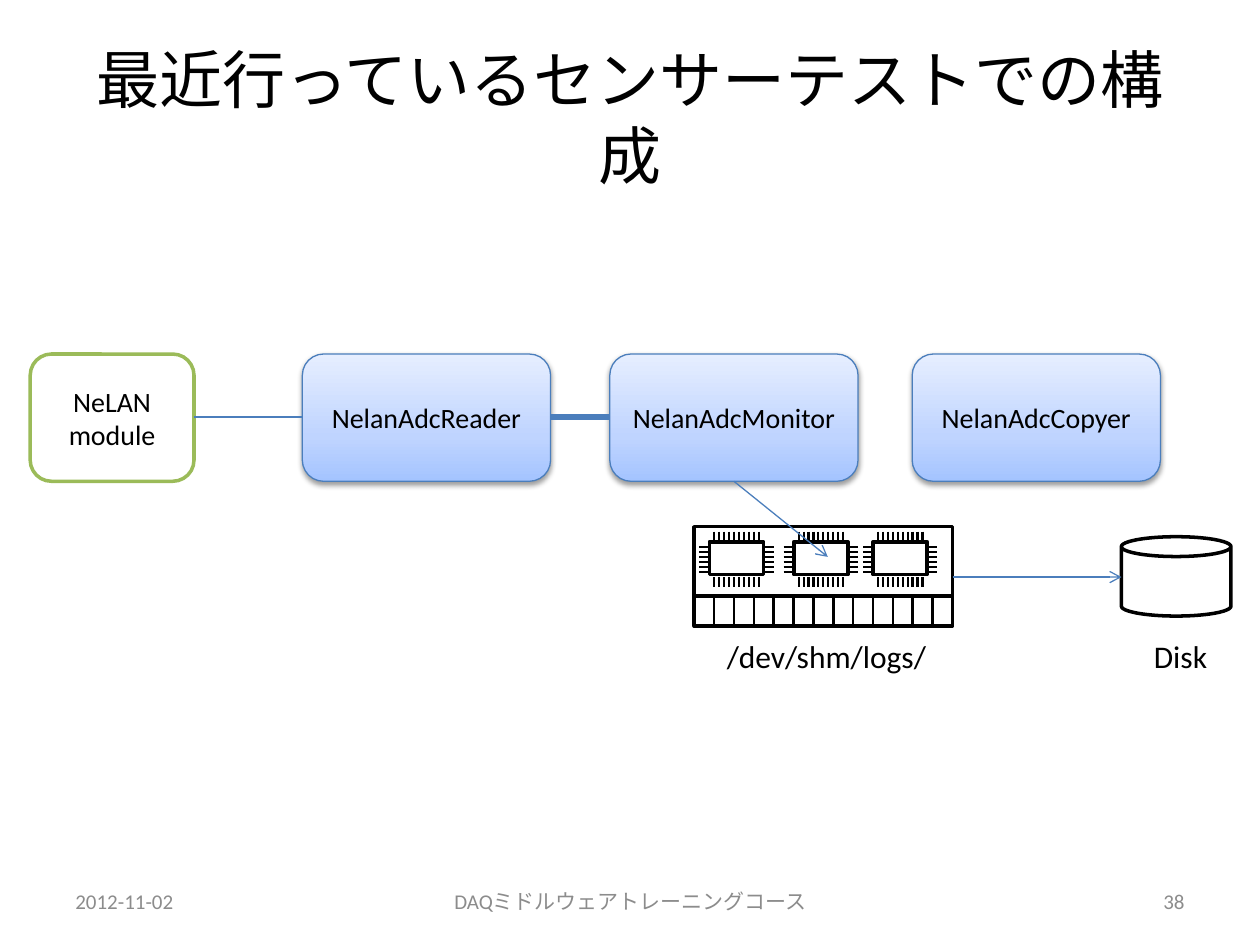
from dataclasses import dataclass
from copy import deepcopy

from lxml.etree import SubElement
from pptx import Presentation
from pptx.dml.color import RGBColor
from pptx.enum.shapes import MSO_CONNECTOR, MSO_SHAPE
from pptx.enum.text import MSO_ANCHOR, PP_ALIGN
from pptx.oxml.ns import qn
from pptx.util import Inches, Pt


@dataclass(frozen=True)
class Theme:
    font: str = "Calibri"
    ink: str = "000000"
    paper: str = "FFFFFF"
    muted: str = "8C8C8C"
    blue: str = "4B7EBC"
    green: str = "9BBB59"
    gradient: tuple = ((0, "A4C4FF"), (0.35, "BFD4FF"), (1, "E6EEFF"))
    title_size: int = 36
    label_size: int = 18
    box_size: int = 16
    footer_size: int = 12
    thin: float = 0.75
    thick: float = 3
    outline: float = 2
    slot: float = 1.5
    pin: float = 1.25


THEME = Theme()

# Content: lengths in inches
TITLE = "最近行っているセンサーテストでの構成"
FOOTERS = [
    ("2012-11-02", 0.5, 2.33, PP_ALIGN.LEFT),
    ("DAQミドルウェアトレーニングコース", 3.42, 3.17, PP_ALIGN.CENTER),
    ("38", 7.17, 2.33, PP_ALIGN.RIGHT),
]
COMPONENTS = [("NelanAdcReader", 2.4), ("NelanAdcMonitor", 4.84), ("NelanAdcCopyer", 7.24)]
SOURCE_MODULE = "NeLAN\nmodule"
LABELS = [("/dev/shm/logs/", 5.67, 1.8), ("Disk", 9.06, 0.63)]

BOX_TOP, BOX_WIDTH, BOX_HEIGHT = 2.81, 1.97, 1.01
MODULE_LEFT, MODULE_WIDTH = 0.24, 1.3
LINK_Y = 3.31
MEMORY = (5.51, 4.18, 2.05, 0.79)
SLOT_TOP, SLOT_COUNT = 4.73, 13
CHIP_LEFTS = (5.63, 6.3, 6.93)
CHIP_TOP, CHIP_WIDTH, CHIP_HEIGHT = 4.3, 0.43, 0.26
PIN_LENGTH, PIN_PITCH = 0.08, 0.04
PINS_ACROSS, PINS_DOWN = 10, 6
DISK = (8.9, 4.26, 0.87, 0.63)
DISK_LINK_Y = 4.58


def inches(values):
    return [Inches(value) for value in values]


def write(shape, text, size, color, align):
    frame = shape.text_frame
    frame.text = text
    for paragraph in frame.paragraphs:
        paragraph.alignment = align
        for run in paragraph.runs:
            run.font.name = THEME.font
            run.font.size = Pt(size)
            run.font.color.rgb = RGBColor.from_string(color)


def add_text(shapes, text, place, size, color=THEME.ink, align=PP_ALIGN.LEFT,
             anchor=MSO_ANCHOR.MIDDLE, wrap=True):
    box = shapes.add_textbox(*inches(place))
    write(box, text, size, color, align)
    box.text_frame.word_wrap = wrap
    box.text_frame.vertical_anchor = anchor


def add_outline(shapes, kind, place, color=THEME.ink):
    shape = shapes.add_shape(kind, *inches(place))
    shape.shadow.inherit = False
    shape.fill.background()
    shape.line.color.rgb = RGBColor.from_string(color)
    shape.line.width = Pt(THEME.outline)
    return shape


def add_line(shapes, start, end, color=THEME.ink, width=THEME.thin, arrow=False):
    line = shapes.add_connector(MSO_CONNECTOR.STRAIGHT, *inches((*start, *end)))
    line.line.color.rgb = RGBColor.from_string(color)
    line.line.width = Pt(width)
    properties = line._element.spPr
    if arrow:
        SubElement(properties.find(qn("a:ln")), qn("a:tailEnd"), type="arrow")
    SubElement(properties, qn("a:effectLst"))


def add_component(shapes, name, left):
    place = (left, BOX_TOP, BOX_WIDTH, BOX_HEIGHT)
    shape = add_outline(shapes, MSO_SHAPE.ROUNDED_RECTANGLE, place, THEME.blue)
    shape.line.width = Pt(THEME.thin)
    properties = shape._element.spPr

    # Three-stop gradient, palest at the top
    shape.fill.gradient()
    shape.fill.gradient_angle = 90
    stop_list = properties.find(".//" + qn("a:gsLst"))
    stop_list.append(deepcopy(stop_list[-1]))
    for stop, (position, color) in zip(shape.fill.gradient_stops, THEME.gradient):
        stop.position = position
        stop.color.rgb = RGBColor.from_string(color)

    # Soft shadow below
    shadow = SubElement(properties.find(qn("a:effectLst")), qn("a:outerShdw"),
                        blurRad=str(Pt(3.1)), dist=str(Pt(1.6)), dir="5400000", rotWithShape="0")
    shadow_color = SubElement(shadow, qn("a:srgbClr"), val=THEME.ink)
    SubElement(shadow_color, qn("a:alpha"), val="38000")
    write(shape, name, THEME.box_size, THEME.ink, PP_ALIGN.CENTER)


def add_chip(shapes, left):
    add_outline(shapes, MSO_SHAPE.RECTANGLE, (left, CHIP_TOP, CHIP_WIDTH, CHIP_HEIGHT))
    for index in range(PINS_ACROSS):
        x = left + CHIP_WIDTH * (index + 1) / (PINS_ACROSS + 1)
        for y in (CHIP_TOP - PIN_LENGTH, CHIP_TOP + CHIP_HEIGHT + 0.02):
            add_line(shapes, (x, y), (x, y + PIN_LENGTH), width=THEME.pin)
    for index in range(PINS_DOWN):
        y = CHIP_TOP + PIN_PITCH * (index + 1)
        for x in (left - PIN_LENGTH, left + CHIP_WIDTH):
            add_line(shapes, (x, y), (x + PIN_LENGTH, y), width=THEME.pin)


def add_memory(shapes):
    left, top, width, height = MEMORY
    add_outline(shapes, MSO_SHAPE.RECTANGLE, MEMORY)
    add_line(shapes, (left, SLOT_TOP), (left + width, SLOT_TOP), width=THEME.outline)
    for index in range(1, SLOT_COUNT):
        x = left + width * index / SLOT_COUNT
        add_line(shapes, (x, SLOT_TOP), (x, top + height), width=THEME.slot)
    for chip_left in CHIP_LEFTS:
        add_chip(shapes, chip_left)


def main():
    presentation = Presentation()
    presentation.slide_width, presentation.slide_height = Inches(10), Inches(7.5)
    slide = presentation.slides.add_slide(presentation.slide_layouts[6])
    shapes = slide.shapes

    # Title and footers
    add_text(shapes, TITLE, (0.5, 0.3, 9, 1.25), THEME.title_size, align=PP_ALIGN.CENTER)
    for text, left, width, align in FOOTERS:
        add_text(shapes, text, (left, 6.95, width, 0.4), THEME.footer_size, THEME.muted, align)

    # Processing chain
    for name, left in COMPONENTS:
        add_component(shapes, name, left)
    module = add_outline(shapes, MSO_SHAPE.ROUNDED_RECTANGLE,
                         (MODULE_LEFT, BOX_TOP, MODULE_WIDTH, BOX_HEIGHT), THEME.green)
    module.fill.solid()
    module.fill.fore_color.rgb = RGBColor.from_string(THEME.paper)
    write(module, SOURCE_MODULE, THEME.box_size, THEME.ink, PP_ALIGN.CENTER)

    # Storage
    add_outline(shapes, MSO_SHAPE.CAN, DISK)
    add_memory(shapes.add_group_shape().shapes)
    for text, left, width in LABELS:
        add_text(shapes, text, (left, 5.01, width, 0.4), THEME.label_size,
                 anchor=MSO_ANCHOR.TOP, wrap=False)

    # Links
    reader, monitor = COMPONENTS[0][1], COMPONENTS[1][1]
    links = [
        ((MODULE_LEFT + MODULE_WIDTH, LINK_Y), (reader, LINK_Y), THEME.thin, False),
        ((reader + BOX_WIDTH, LINK_Y), (monitor, LINK_Y), THEME.thick, False),
        ((monitor + BOX_WIDTH / 2, BOX_TOP + BOX_HEIGHT), (6.57, 4.42), THEME.thin, True),
        ((MEMORY[0] + MEMORY[2], DISK_LINK_Y), (DISK[0], DISK_LINK_Y), THEME.thin, True),
    ]
    for start, end, width, arrow in links:
        add_line(shapes, start, end, THEME.blue, width, arrow)

    presentation.save("out.pptx")


if __name__ == "__main__":
    main()
